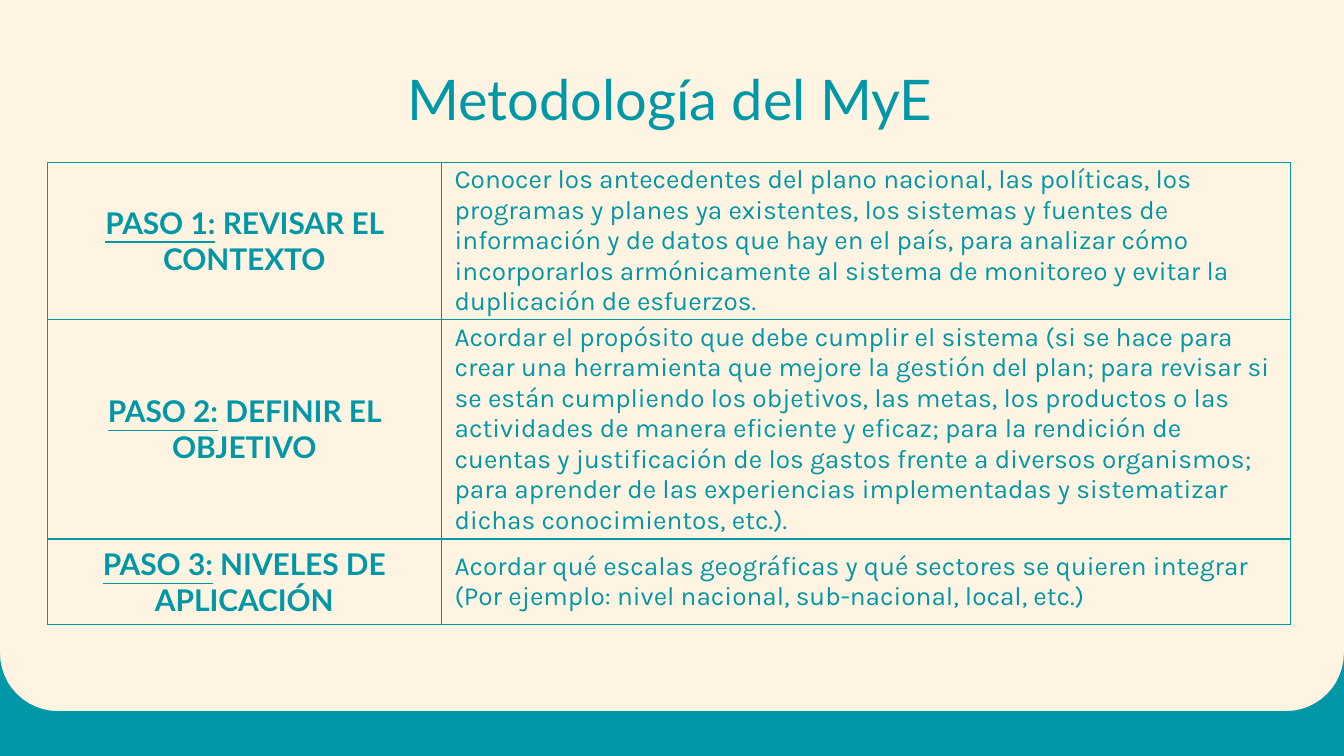
from math import cos, pi, sin

from lxml.etree import SubElement
from pptx import Presentation
from pptx.dml.color import RGBColor
from pptx.enum.text import MSO_ANCHOR, PP_ALIGN
from pptx.oxml.ns import qn
from pptx.util import Pt

TEAL = RGBColor(0x00, 0x97, 0xA7)
CREAM = RGBColor(0xFF, 0xF3, 0xE2)

WIDTH, HEIGHT = 720, 405
TITLE_FONT = {"name": "Lato", "size": Pt(30)}
STEP_FONT = {"name": "Lato", "size": Pt(16), "bold": True}
BODY_FONT = {"name": "Karla", "size": Pt(14), "bold": False}

# Step, its name, description and row height
STEPS = [
    ("PASO 1:", " REVISAR EL CONTEXTO",
     "Conocer los antecedentes del plano nacional, las políticas, los programas y planes ya "
     "existentes, los sistemas y fuentes de información y de datos que hay en el país, para "
     "analizar cómo incorporarlos armónicamente al sistema de monitoreo y evitar la "
     "duplicación de esfuerzos.", 81.4),
    ("PASO 2:", " DEFINIR EL OBJETIVO",
     "Acordar el propósito que debe cumplir el sistema (si se hace para crear una herramienta "
     "que mejore la gestión del plan; para revisar si se están cumpliendo los objetivos, las "
     "metas, los productos o las actividades de manera eficiente y eficaz; para la rendición "
     "de cuentas y justificación de los gastos frente a diversos organismos; para aprender de "
     "las experiencias implementadas y sistematizar dichas conocimientos, etc.).", 114.5),
    ("PASO 3:", " NIVELES DE APLICACIÓN",
     "Acordar qué escalas geográficas y qué sectores se quieren integrar (Por ejemplo: nivel "
     "nacional, sub-nacional, local, etc.)", 46),
]


def add_run(p, text, **font):
    r = p.add_run()
    r.text = text
    r.font.color.rgb = TEAL
    for name, value in font.items():
        setattr(r.font, name, value)


def add_borders(cell):
    props = cell._tc.get_or_add_tcPr()
    for position, side in enumerate(("lnL", "lnR", "lnT", "lnB")):
        line = SubElement(props, qn(f"a:{side}"), w=str(Pt(0.75)))
        fill = SubElement(line, qn("a:solidFill"))
        SubElement(fill, qn("a:srgbClr"), val=str(TEAL))
        props.insert(position, line)


def add_footer(s, left, top, width, height, radius):
    """Band whose upper edge curves up at both ends."""
    right, bottom = left + width, top + height
    edge = top + radius
    angles = [pi / 2 * i / 12 for i in range(13)]
    left_arc = [(left + radius * (1 - cos(a)), top + radius * sin(a)) for a in angles]
    right_arc = [(right - radius * (1 - sin(a)), top + radius * cos(a)) for a in angles]
    outline = left_arc + right_arc + [(right, bottom), (left, bottom)]
    assert outline[12][1] == edge
    points = [(Pt(x), Pt(y)) for x, y in outline]
    builder = s.shapes.build_freeform(*points[0])
    builder.add_line_segments(points[1:], close=True)
    sp = builder.convert_to_shape()
    sp.shadow.inherit = False
    sp.fill.solid()
    sp.fill.fore_color.rgb = TEAL
    sp.line.fill.background()


def add_title(s, left, top, width, height):
    sp = s.shapes.add_textbox(Pt(left), Pt(top), Pt(width), Pt(height))
    tf = sp.text_frame
    frame_format = {"word_wrap": True, "vertical_anchor": MSO_ANCHOR.TOP}
    for side in ("left", "right", "top", "bottom"):
        frame_format[f"margin_{side}"] = Pt(7.2)
    for name, value in frame_format.items():
        setattr(tf, name, value)
    p = tf.paragraphs[0]
    p.alignment = PP_ALIGN.CENTER
    add_run(p, "Metodología del MyE", **TITLE_FONT)


def add_steps(s, left, top, width, step_width):
    height = sum(step[-1] for step in STEPS)
    table = s.shapes.add_table(len(STEPS), 2, Pt(left), Pt(top), Pt(width), Pt(height)).table
    table.first_row = table.horz_banding = False
    table.columns[0].width = Pt(step_width)
    table.columns[1].width = Pt(width - step_width)
    cell_format = {"vertical_anchor": MSO_ANCHOR.MIDDLE, "margin_left": Pt(7.2),
                   "margin_right": Pt(7.2), "margin_top": 0, "margin_bottom": 0}

    for row, (step, name, description, row_height) in zip(table.rows, STEPS):
        row.height = Pt(row_height)
        for cell in row.cells:
            for key, value in cell_format.items():
                setattr(cell, key, value)
            cell.fill.background()
            add_borders(cell)
        # Step name
        p = row.cells[0].text_frame.paragraphs[0]
        p.alignment = PP_ALIGN.CENTER
        add_run(p, step, underline=True, **STEP_FONT)
        add_run(p, name, underline=False, **STEP_FONT)
        # Description
        p = row.cells[1].text_frame.paragraphs[0]
        p.space_after = Pt(16)
        add_run(p, description, **BODY_FONT)


def main():
    prs = Presentation()
    prs.slide_width, prs.slide_height = Pt(WIDTH), Pt(HEIGHT)
    s = prs.slides.add_slide(prs.slide_layouts[6])
    s.background.fill.solid()
    s.background.fill.fore_color.rgb = CREAM
    add_footer(s, left=0, top=350, width=WIDTH, height=HEIGHT - 350, radius=31)
    add_title(s, left=55.4, top=27.4, width=607, height=45.4)
    add_steps(s, left=25.4, top=87, width=666, step_width=211)
    prs.save("out.pptx")


if __name__ == "__main__":
    main()
